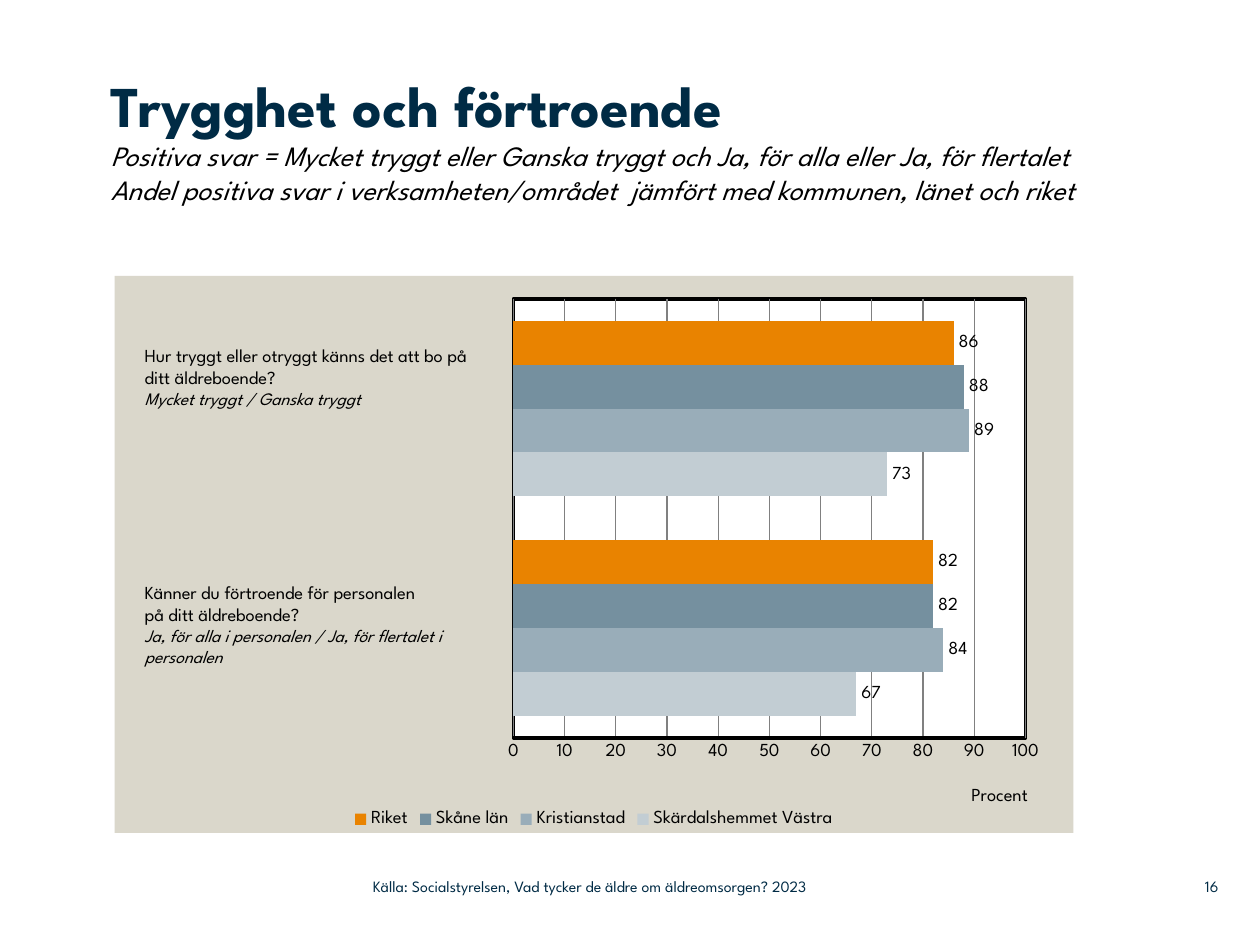
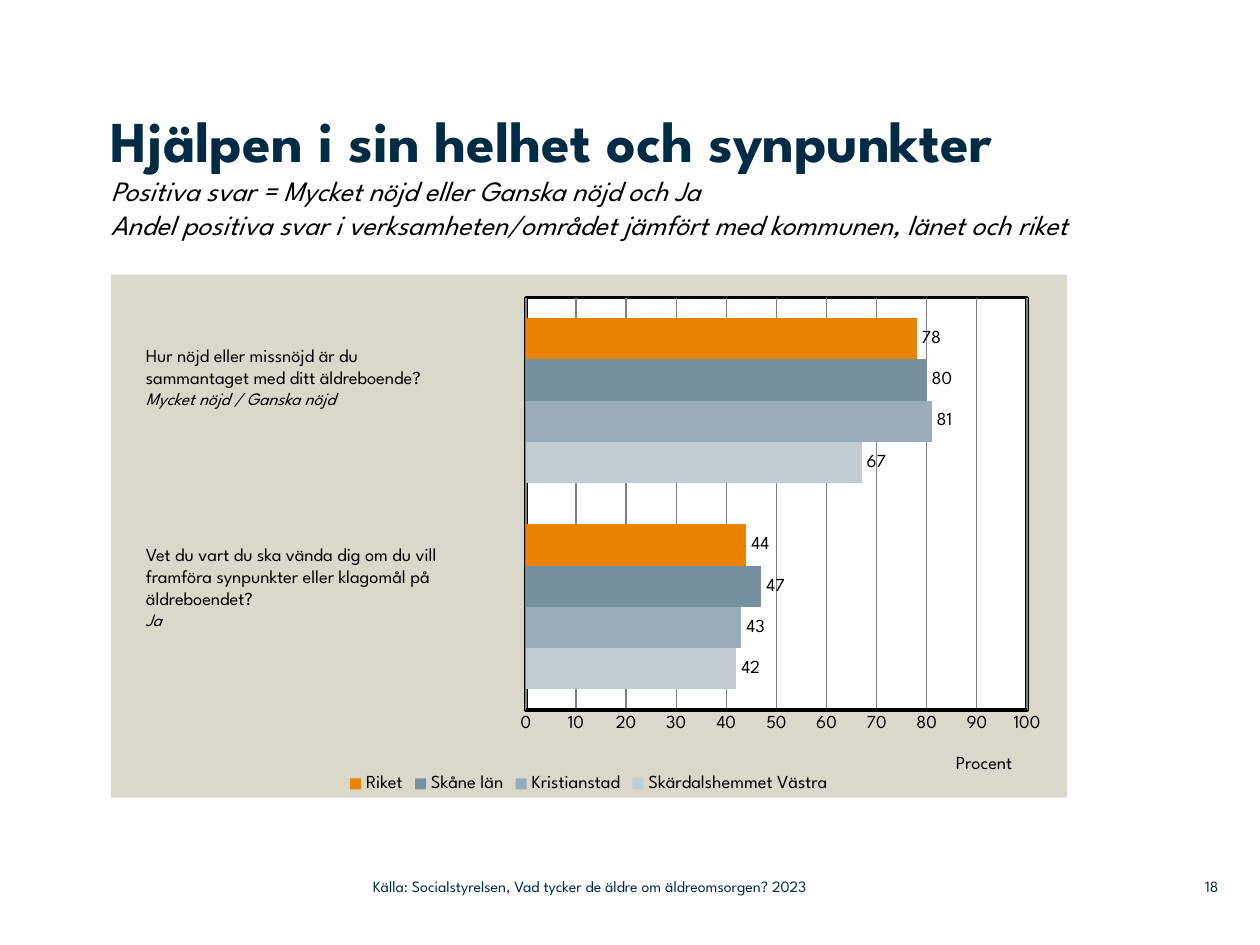
"""Build two slides that compare positive survey answers about care homes."""
from dataclasses import dataclass

from lxml.etree import _Element as Element
from pptx import Presentation
from pptx.chart.chart import Chart
from pptx.chart.data import CategoryChartData
from pptx.dml.color import RGBColor
from pptx.enum.chart import XL_CHART_TYPE as ChartType
from pptx.enum.chart import XL_LABEL_POSITION as LabelPosition
from pptx.enum.chart import XL_LEGEND_POSITION as LegendPosition
from pptx.enum.chart import XL_TICK_MARK as TickMark
from pptx.enum.text import MSO_ANCHOR as Anchor
from pptx.enum.text import MSO_AUTO_SIZE as AutoSize
from pptx.enum.text import PP_ALIGN as Align
from pptx.oxml import parse_xml
from pptx.oxml.ns import nsdecls, qn
from pptx.slide import Slide
from pptx.text.text import TextFrame
from pptx.util import Inches, Pt

FONT = "League Spartan"
COLORS = {
    "navy": "002B45",
    "black": "000000",
    "white": "FFFFFF",
    "panel": "DAD7CB",
    "grid": "808080",
}
SERIES_COLORS = {
    "Skärdalshemmet Västra": "C2CDD3",
    "Kristianstad": "99ADB9",
    "Skåne län": "75909F",
    "Riket": "E98300",
}
SOURCE = "Källa: Socialstyrelsen, Vad tycker de äldre om äldreomsorgen? 2023"
CHART_SIZE = 10.5


@dataclass(frozen=True)
class Box:
    left: float
    top: float
    width: float
    height: float

    def lengths(self) -> tuple[int, ...]:
        return tuple(Inches(v) for v in (self.left, self.top, self.width, self.height))


@dataclass(frozen=True)
class Question:
    box: Box
    wording: tuple[str, ...]
    positive: str


@dataclass(frozen=True)
class ResultChart:
    box: Box
    plot: Box
    unit_at: tuple[float, float]
    values: tuple[tuple[int, int], ...]


@dataclass(frozen=True)
class ResultSlide:
    number: int
    heading: str
    subtitle: tuple[str, str]
    title_box: Box
    questions: tuple[Question, Question]
    results: ResultChart


RESULT_SLIDES = (
    ResultSlide(
        16,
        "Trygghet och förtroende",
        (
            "Positiva svar = Mycket tryggt eller Ganska tryggt och Ja, för alla eller Ja, för flertalet",
            "Andel positiva svar i verksamheten/området  jämfört med kommunen, länet och riket",
        ),
        Box(0.88, 0.55, 7.75, 1.64),
        (
            Question(
                Box(1.05, 2.68, 2.98, 0.81),
                ("Hur tryggt eller otryggt känns det att bo på ditt äldreboende?",),
                "Mycket tryggt / Ganska tryggt",
            ),
            Question(
                Box(1.05, 4.56, 3, 0.98),
                ("Känner du förtroende för personalen", "på ditt äldreboende?"),
                "Ja, för alla i personalen / Ja, för flertalet i personalen",
            ),
        ),
        ResultChart(
            Box(0.91, 2.19, 7.61, 4.42),
            Box(0.416, 0.041, 0.534, 0.789),
            (0.89, 0.91),
            ((67, 73), (84, 89), (82, 88), (82, 86)),
        ),
    ),
    ResultSlide(
        18,
        "Hjälpen i sin helhet och synpunkter",
        (
            "Positiva svar = Mycket nöjd eller Ganska nöjd och Ja",
            "Andel positiva svar i verksamheten/området jämfört med kommunen, länet och riket",
        ),
        Box(0.88, 0.83, 7.79, 1.34),
        (
            Question(
                Box(1.06, 2.68, 3.1, 0.81),
                ("Hur nöjd eller missnöjd är du", "sammantaget med ditt äldreboende?"),
                "Mycket nöjd / Ganska nöjd",
            ),
            Question(
                Box(1.06, 4.26, 3.05, 0.81),
                ("Vet du vart du ska vända dig om du vill framföra synpunkter "
                 "eller klagomål på äldreboendet?",),
                "Ja",
            ),
        ),
        ResultChart(
            Box(0.88, 2.18, 7.59, 4.15),
            Box(0.434, 0.044, 0.524, 0.789),
            (0.88, 0.91),
            ((42, 67), (43, 81), (47, 80), (44, 78)),
        ),
    ),
)


def rgb(name: str) -> RGBColor:
    """Return a named colour."""
    return RGBColor.from_string(COLORS[name])


def add_line(frame: TextFrame, text: str, *, size: float, color: str = "black",
             bold: bool = False, italic: bool = False, align: Align = Align.LEFT) -> None:
    """Write one paragraph, using the empty first one if there is one."""
    first = frame.paragraphs[0]
    paragraph = frame.add_paragraph() if first.runs else first
    paragraph.alignment = align
    run = paragraph.add_run()
    run.text = text
    font = run.font
    font.name, font.size, font.bold, font.italic = FONT, Pt(size), bold, italic
    font.color.rgb = rgb(color)


def clear_insets(frame: TextFrame, anchor: Anchor) -> None:
    """Remove the margins of a frame and anchor its text."""
    frame.margin_left = frame.margin_right = frame.margin_top = frame.margin_bottom = 0
    frame.vertical_anchor = anchor


def add_frame(slide: Slide, box: Box) -> TextFrame:
    """Add a wrapping text box and return its frame."""
    frame = slide.shapes.add_textbox(*box.lengths()).text_frame
    frame.word_wrap = True
    return frame


def write_title(slide: Slide, content: ResultSlide) -> None:
    """Place the heading and its two explanatory lines."""
    title = slide.shapes.title
    title.left, title.top, title.width, title.height = content.title_box.lengths()
    frame = title.text_frame
    frame.word_wrap = True
    frame.auto_size = AutoSize.NONE
    clear_insets(frame, Anchor.TOP)
    add_line(frame, content.heading, size=33, color="navy", bold=True)
    for line in content.subtitle:
        add_line(frame, line, size=16, italic=True)


def write_question(slide: Slide, question: Question) -> None:
    """Write a survey question and the answers counted as positive."""
    frame = add_frame(slide, question.box)
    for line in question.wording:
        add_line(frame, line, size=10.5)
    add_line(frame, question.positive, size=10, italic=True)


def write_footer(slide: Slide, number: int) -> None:
    """Write the slide number and the source."""
    for box, text, align in (
        (Box(9.2, 6.89, 0.47, 0.29), str(number), Align.RIGHT),
        (Box(2.96, 6.89, 4.43, 0.29), SOURCE, Align.LEFT),
    ):
        frame = add_frame(slide, box)
        clear_insets(frame, Anchor.MIDDLE)
        add_line(frame, text, size=9, color="navy", align=align)


def set_layout(parent: Element, target: str = "", **fractions: float) -> None:
    """Give a chart part a manual layout in fractions of the chart."""
    modes = "".join(f'<c:{axis}Mode val="edge"/>' for axis in "xy")
    sizes = "".join(f'<c:{key} val="{value}"/>' for key, value in fractions.items())
    layout = parse_xml(
        f'<c:layout {nsdecls("c")}><c:manualLayout>{target}{modes}{sizes}'
        "</c:manualLayout></c:layout>"
    )
    present = parent.find(qn("c:layout"))
    if present is None:
        parent.insert(0, layout)
    else:
        parent.replace(present, layout)


def area_format(fill: str, line: str) -> Element:
    """Return the fill and outline of a chart area."""
    return parse_xml(
        f'<c:spPr {nsdecls("c", "a")}><a:solidFill><a:srgbClr val="{COLORS[fill]}"/>'
        f"</a:solidFill>{line}</c:spPr>"
    )


def format_areas(chart: Chart, plot: Box) -> None:
    """Colour the panel and place the framed plot area."""
    frame_line = (f'<a:ln w="{Pt(2)}"><a:solidFill><a:srgbClr val="{COLORS["black"]}"/>'
                  "</a:solidFill></a:ln>")
    chart_node = chart.element.find(qn("c:chart"))
    chart_node.addnext(area_format("panel", "<a:ln><a:noFill/></a:ln>"))
    plot_area = chart_node.find(qn("c:plotArea"))
    plot_area.append(area_format("white", frame_line))
    set_layout(plot_area, '<c:layoutTarget val="inner"/>',
               x=plot.left, y=plot.top, w=plot.width, h=plot.height)


def format_percent_axis(chart: Chart, unit_at: tuple[float, float]) -> None:
    """Set the scale, grid and unit of the value axis."""
    axis = chart.value_axis
    axis.minimum_scale, axis.maximum_scale, axis.major_unit = 0, 100, 10
    axis.major_tick_mark = axis.minor_tick_mark = TickMark.NONE
    axis.format.line.color.rgb = rgb("black")
    axis.format.line.width = Pt(2)
    grid = axis.major_gridlines.format.line
    grid.color.rgb = rgb("grid")
    grid.width = Pt(0.75)
    unit = axis.axis_title
    add_line(unit.text_frame, "Procent", size=CHART_SIZE)
    set_layout(unit.element, x=unit_at[0], y=unit_at[1])


def draw_results(slide: Slide, results: ResultChart) -> None:
    """Draw the bars that compare the home with its surroundings."""
    data = CategoryChartData(number_format="0")
    data.categories = ["1", "2"]
    for name, values in zip(SERIES_COLORS, results.values):
        data.add_series(name, values)
    chart = slide.shapes.add_chart(ChartType.BAR_CLUSTERED, *results.box.lengths(), data).chart
    chart.has_title = False
    chart.font.name, chart.font.size = FONT, Pt(CHART_SIZE)
    chart.font.color.rgb = rgb("black")
    chart.has_legend = True
    chart.legend.position = LegendPosition.BOTTOM
    chart.legend.include_in_layout = False
    chart.category_axis.visible = False
    bars = chart.plots[0]
    bars.gap_width, bars.overlap, bars.vary_by_categories = 100, 0, False
    for series in bars.series:
        series.invert_if_negative = False
        series.format.fill.solid()
        series.format.fill.fore_color.rgb = RGBColor.from_string(SERIES_COLORS[series.name])
        series.data_labels.show_value = True
        series.data_labels.position = LabelPosition.OUTSIDE_END
    format_percent_axis(chart, results.unit_at)
    format_areas(chart, results.plot)


def main() -> None:
    """Build and save the presentation."""
    deck = Presentation()
    deck.slide_width, deck.slide_height = Inches(10), Inches(7.5)
    for content in RESULT_SLIDES:
        slide = deck.slides.add_slide(deck.slide_layouts[5])
        draw_results(slide, content.results)
        write_title(slide, content)
        for question in content.questions:
            write_question(slide, question)
        write_footer(slide, content.number)
    deck.save("out.pptx")


if __name__ == "__main__":
    main()
